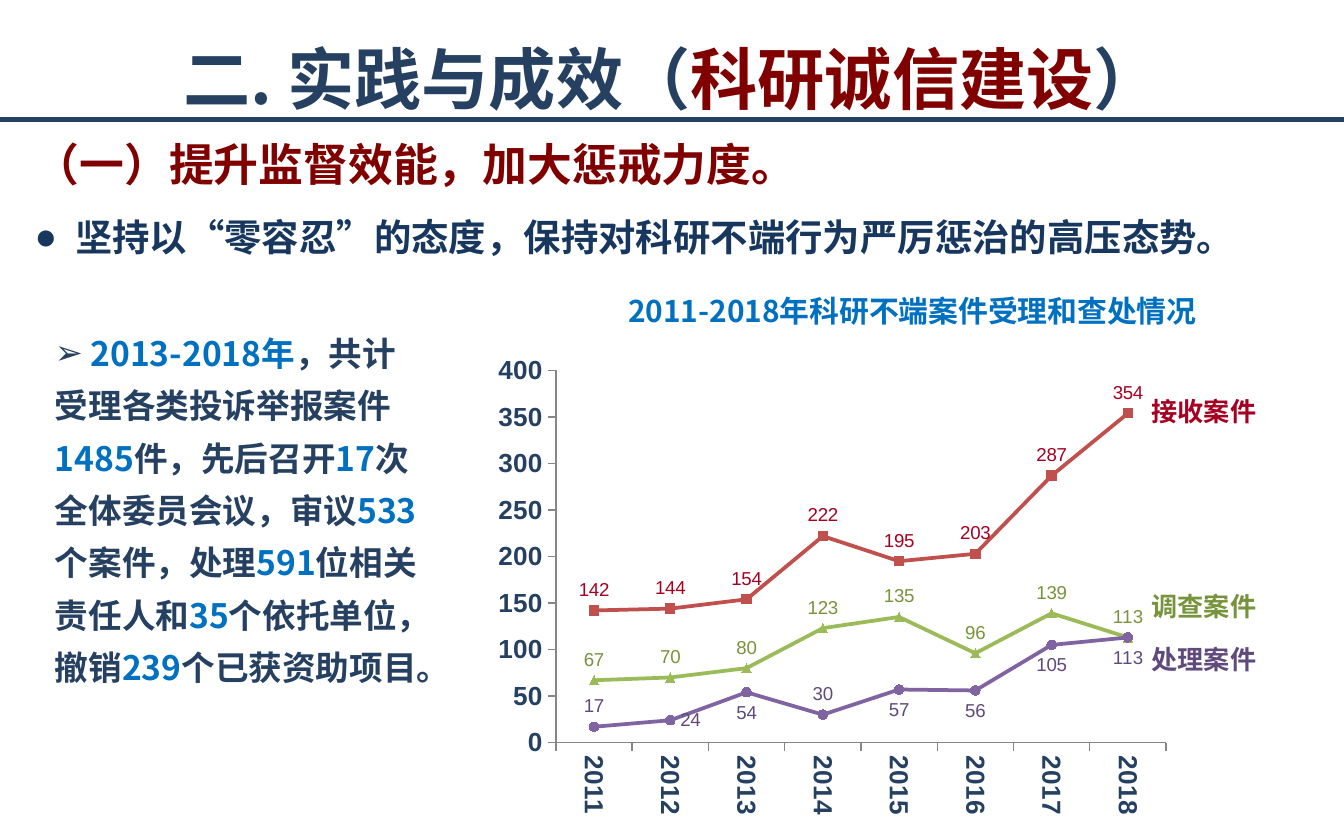
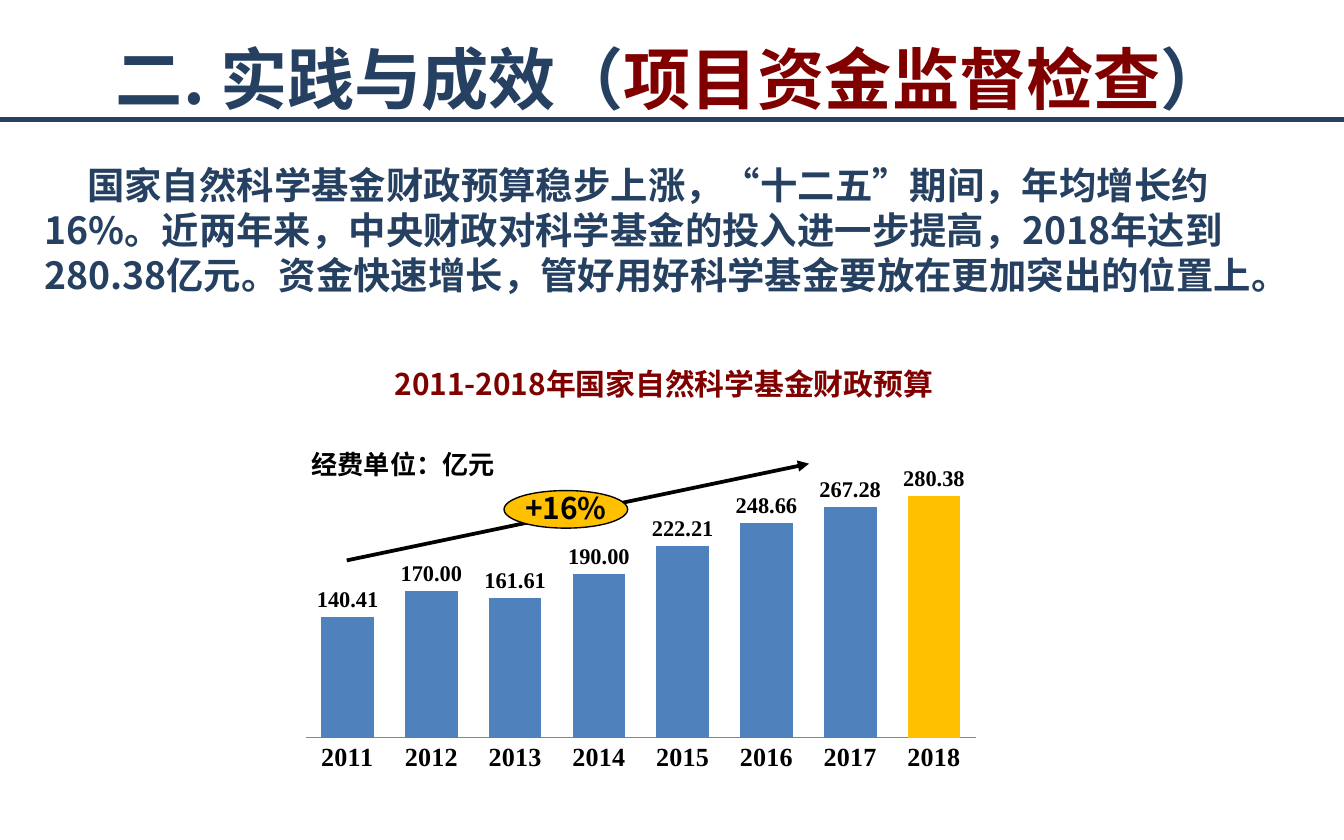
"""Build two slides on research integrity cases and on the science fund budget."""
from dataclasses import dataclass

from lxml import etree
from pptx import Presentation
from pptx import util as u
from pptx.chart import data as chart_data
from pptx.dml import color as dml
from pptx.enum import chart as ec
from pptx.enum import dml as line_styles
from pptx.enum import shapes, text
from pptx.oxml import ns


@dataclass(frozen=True)
class Theme:
    """Colours, fonts and type sizes shared by the slides."""
    navy: str = "254061"
    deep: str = "17375E"
    maroon: str = "800000"
    blue: str = "0070C0"
    gold: str = "FFC000"
    bar: str = "4F81BD"
    black: str = "000000"
    white: str = "FFFFFF"
    grey: str = "868686"
    sans: str = "Noto Sans CJK SC"
    arial: str = "Arial"
    serif: str = "Times New Roman"
    title: int = 36
    heading: int = 24
    body: int = 20
    side: int = 18
    caption: int = 16
    label: int = 14
    value: int = 12
    small: int = 10


T = Theme()
YEARS = [str(year) for year in range(2011, 2019)]
TITLES = ["科研诚信建设", "项目资金监督检查"]
HEADING = "（一）提升监督效能，加大惩戒力度。"
POLICY = "坚持以“零容忍”的态度，保持对科研不端行为严厉惩治的高压态势。"
CASE_CAPTION = "2011-2018年科研不端案件受理和查处情况"
SUMMARY = [
    "2013-2018年", "，共计受理各类投诉举报案件", "1485", "件，先后召开", "17",
    "次全体委员会议，审议", "533", "个案件，处理", "591", "位相关责任人和", "35",
    "个依托单位，撤销", "239", "个已获资助项目。",
]
CASES = [
    dict(name="接收案件", values=[142, 144, 154, 222, 195, 203, 287, 354], line="C0504D",
         label="A50021", marker="SQUARE", position="ABOVE", moved={}, top=2.89),
    dict(name="调查案件", values=[67, 70, 80, 123, 135, 96, 139, 113], line="9BBB59",
         label="77933C", marker="TRIANGLE", position="ABOVE", moved={}, top=4.34),
    dict(name="处理案件", values=[17, 24, 54, 30, 57, 56, 105, 113], line="8064A2",
         label="604A7B", marker="CIRCLE", position="BELOW",
         moved={0: "ABOVE", 1: "RIGHT", 3: "ABOVE"}, top=4.74),
]
BUDGET_TEXT = ("国家自然科学基金财政预算稳步上涨，“十二五”期间，年均增长约16%。"
               "近两年来，中央财政对科学基金的投入进一步提高，2018年达到280.38亿元。"
               "资金快速增长，管好用好科学基金要放在更加突出的位置上。")
BUDGET_CAPTION = "2011-2018年国家自然科学基金财政预算"
BUDGET_UNIT = "经费单位：亿元"
BUDGET = [140.41, 170, 161.61, 190, 222.21, 248.66, 267.28, 280.38]
GROWTH = "+16%"


def rgb(code):
    """Turn a hex code into a colour."""
    return dml.RGBColor.from_string(code)


def inches(*lengths):
    """Turn numbers into inch lengths."""
    return [u.Inches(length) for length in lengths]


def apply(target, **values):
    """Set each given attribute on the target."""
    for name, value in values.items():
        setattr(target, name, value)


def style_font(font, size, color, bold=True, name=T.arial):
    """Format one font."""
    apply(font, size=u.Pt(size), bold=bold, name=name)
    font.color.rgb = rgb(color)


def style_line(line, color, width):
    """Colour a line and set its width."""
    line.color.rgb = rgb(color)
    line.width = u.Pt(width)


def add_child(parent, tag, **attributes):
    """Append a namespaced element."""
    return etree.SubElement(parent, ns.qn(tag), **attributes)


def write_paragraph(paragraph, runs, size, name=T.sans, indent=None, bullet=None, **values):
    """Fill a paragraph with (text, colour) runs."""
    apply(paragraph, **values)
    for words, color in runs:
        run = paragraph.add_run()
        run.text = words
        style_font(run.font, size, color, name=name)
        add_child(run.font._element, "a:ea", typeface=T.sans)
    properties = paragraph._p.get_or_add_pPr()
    if indent:
        for key, length in zip(("marL", "indent"), indent):
            properties.set(key, str(u.Inches(length)))
    if bullet:
        add_child(properties, "a:buFont", typeface=T.arial)
        add_child(properties, "a:buChar", char=bullet)


def add_text(slide, box, paragraphs, wrap=True):
    """Add a text box holding the described paragraphs."""
    frame = slide.shapes.add_textbox(*inches(*box)).text_frame
    frame.word_wrap = wrap
    for index, values in enumerate(paragraphs):
        paragraph = frame.add_paragraph() if index else frame.paragraphs[0]
        write_paragraph(paragraph, **values)


def add_line(slide, start, end, color, width, arrow=False):
    """Add a straight line, with an arrowhead if wanted."""
    connector = slide.shapes.add_connector(
        shapes.MSO_CONNECTOR.STRAIGHT, *inches(*start, *end))
    style_line(connector.line, color, width)
    if arrow:
        add_child(connector.element.xpath(".//a:ln")[0], "a:tailEnd", type="triangle")
    add_child(connector.element.spPr, "a:effectLst")


def add_titled_slide(presentation, topic):
    """Add a slide with the shared title and rule."""
    slide = presentation.slides.add_slide(presentation.slide_layouts[5])
    title = slide.shapes.title
    left, top, width, height = inches(0.5, 0, 9, 0.86)
    apply(title, left=left, top=top, width=width, height=height)
    apply(title.text_frame, vertical_anchor=text.MSO_ANCHOR.MIDDLE,
          auto_size=text.MSO_AUTO_SIZE.NONE)
    write_paragraph(
        title.text_frame.paragraphs[0],
        [("二. 实践与成效（", T.navy), (topic, T.maroon), ("）", T.navy)],
        T.title, alignment=text.PP_ALIGN.CENTER, line_spacing=1.5)
    add_line(slide, (0, 0.89), (10, 0.89), T.navy, 2.75)
    return slide


def add_year_chart(slide, kind, box, series, plot):
    """Add a chart over the years with a fixed inner plot area."""
    content = chart_data.CategoryChartData()
    content.categories = YEARS
    for name, values in series:
        content.add_series(name, values)
    chart = slide.shapes.add_chart(kind, *inches(*box), content).chart
    apply(chart, has_legend=False, has_title=False)
    style_font(chart.font, T.small, T.black, bold=False)
    chart.plots[0].vary_by_categories = False
    area = chart.element.xpath(".//c:plotArea")[0]
    for old in area.xpath("./c:layout"):
        area.remove(old)
    layout = etree.Element(ns.qn("c:layout"))
    area.insert(0, layout)
    manual = add_child(layout, "c:manualLayout")
    add_child(manual, "c:layoutTarget", val="inner")
    for key in ("xMode", "yMode"):
        add_child(manual, f"c:{key}", val="edge")
    for key, part in zip("xywh", plot):
        add_child(manual, f"c:{key}", val=str(part))
    style_line(chart.category_axis.format.line, T.grey, 0.75)
    return chart


def add_case_chart(slide):
    """Draw the line chart of cases."""
    chart = add_year_chart(
        slide, ec.XL_CHART_TYPE.LINE_MARKERS, (3.62, 2.58, 5.16, 3.55),
        [(case["name"], case["values"]) for case in CASES], (0.1, 0.05, 0.88, 0.78))
    for axis in (chart.category_axis, chart.value_axis):
        axis.major_tick_mark = ec.XL_TICK_MARK.OUTSIDE
        style_font(axis.tick_labels.font, T.label, T.navy)
    chart.element.xpath(".//c:catAx/c:txPr/a:bodyPr")[0].set("rot", "5400000")
    apply(chart.value_axis, minimum_scale=0, maximum_scale=400, major_unit=50,
          has_major_gridlines=True)
    style_line(chart.value_axis.major_gridlines.format.line, T.white, 0.75)
    style_line(chart.value_axis.format.line, T.grey, 0.75)
    for series, case in zip(chart.plots[0].series, CASES):
        series.smooth = False
        style_line(series.format.line, case["line"], 2)
        apply(series.marker, style=ec.XL_MARKER_STYLE[case["marker"]], size=5)
        series.marker.format.fill.solid()
        series.marker.format.fill.fore_color.rgb = rgb(case["line"])
        style_line(series.marker.format.line, case["line"], 0.75)
        labels = series.data_labels
        apply(labels, show_value=True, position=ec.XL_LABEL_POSITION[case["position"]])
        style_font(labels.font, T.small, case["label"], bold=False)
        for index, position in case["moved"].items():
            label = series.points[index].data_label
            style_font(label.font, T.small, case["label"], bold=False)
            label.position = ec.XL_LABEL_POSITION[position]


def add_budget_chart(slide):
    """Draw the column chart of the budget, with the last year in gold."""
    chart = add_year_chart(
        slide, ec.XL_CHART_TYPE.COLUMN_CLUSTERED, (2.27, 3.39, 5.31, 2.5),
        [("财政预算", BUDGET)], (0, 0.07, 0.94, 0.77))
    plot = chart.plots[0]
    apply(plot, gap_width=59, overlap=-25)
    apply(chart.value_axis, minimum_scale=0, maximum_scale=300,
          has_major_gridlines=False, visible=False)
    chart.category_axis.major_tick_mark = ec.XL_TICK_MARK.NONE
    style_font(chart.category_axis.tick_labels.font, T.label, T.black, name=T.serif)
    series = plot.series[0]
    for target, color in ((series, T.bar), (series.points[len(BUDGET) - 1], T.gold)):
        target.format.fill.solid()
        target.format.fill.fore_color.rgb = rgb(color)
    labels = series.data_labels
    apply(labels, show_value=True, number_format="0.00", number_format_is_linked=False,
          position=ec.XL_LABEL_POSITION.OUTSIDE_END)
    style_font(labels.font, T.value, T.black, name=T.serif)


def add_growth_badge(slide):
    """Add the oval with the growth rate."""
    badge = slide.shapes.add_shape(shapes.MSO_SHAPE.OVAL, *inches(3.75, 3.65, 0.92, 0.28))
    badge.shadow.inherit = False
    badge.fill.solid()
    badge.fill.fore_color.rgb = rgb(T.gold)
    style_line(badge.line, T.black, 0.75)
    badge.line.dash_style = line_styles.MSO_LINE.SOLID
    apply(badge.text_frame, word_wrap=False, vertical_anchor=text.MSO_ANCHOR.MIDDLE,
          margin_left=0, margin_right=0, margin_top=0, margin_bottom=0)
    write_paragraph(badge.text_frame.paragraphs[0], [(GROWTH, T.black)], T.caption,
                    alignment=text.PP_ALIGN.CENTER, line_spacing=0.9)


def add_caption(slide, box, words, color):
    """Add a centred chart caption."""
    add_text(slide, box, [dict(runs=[(words, color)], size=T.caption,
                               alignment=text.PP_ALIGN.CENTER)])


def build_integrity_slide(presentation):
    """Build the slide on research integrity."""
    slide = add_titled_slide(presentation, TITLES[0])
    spacing = dict(line_spacing=u.Pt(25), space_before=u.Pt(12))
    add_text(slide, (0.16, 1.02, 9.69, 0.97), [
        dict(runs=[(HEADING, T.maroon)], size=T.heading, **spacing),
        dict(runs=[(POLICY, T.deep)], size=T.body, indent=(0.3, -0.3), bullet="●", **spacing),
    ])
    add_case_chart(slide)
    add_caption(slide, (4.48, 2.13, 4.62, 0.37), CASE_CAPTION, T.blue)
    for case in CASES:
        add_text(slide, (8.47, case["top"], 0.99, 0.34),
                 [dict(runs=[(case["name"], case["label"])], size=T.label)], wrap=False)
    runs = [(words, T.navy if index % 2 else T.blue) for index, words in enumerate(SUMMARY)]
    add_text(slide, (0.31, 2.34, 2.97, 2.81), [
        dict(runs=[(" ", T.navy)] + runs, size=T.side, indent=(0, 0), bullet="➢",
             line_spacing=u.Pt(28))])


def build_budget_slide(presentation):
    """Build the slide on the fund budget."""
    slide = add_titled_slide(presentation, TITLES[1])
    add_text(slide, (0.23, 1.16, 9.45, 4.73), [
        dict(runs=[(BUDGET_TEXT, T.navy)], size=T.body, indent=(0, 0.32),
             line_spacing=u.Pt(24), space_before=u.Pt(6))])
    add_caption(slide, (1.95, 2.67, 5.98, 0.37), BUDGET_CAPTION, T.maroon)
    add_budget_chart(slide)
    add_line(slide, (2.58, 4.17), (6.02, 3.45), T.black, 2, arrow=True)
    add_growth_badge(slide)
    add_text(slide, (2.22, 3.29, 1.64, 0.34),
             [dict(runs=[(BUDGET_UNIT, T.black)], size=T.label, name=T.arial)])


def main():
    """Build and save the presentation."""
    presentation = Presentation()
    apply(presentation, slide_width=u.Inches(10), slide_height=u.Inches(6.25))
    build_integrity_slide(presentation)
    build_budget_slide(presentation)
    presentation.save("out.pptx")


if __name__ == "__main__":
    main()
